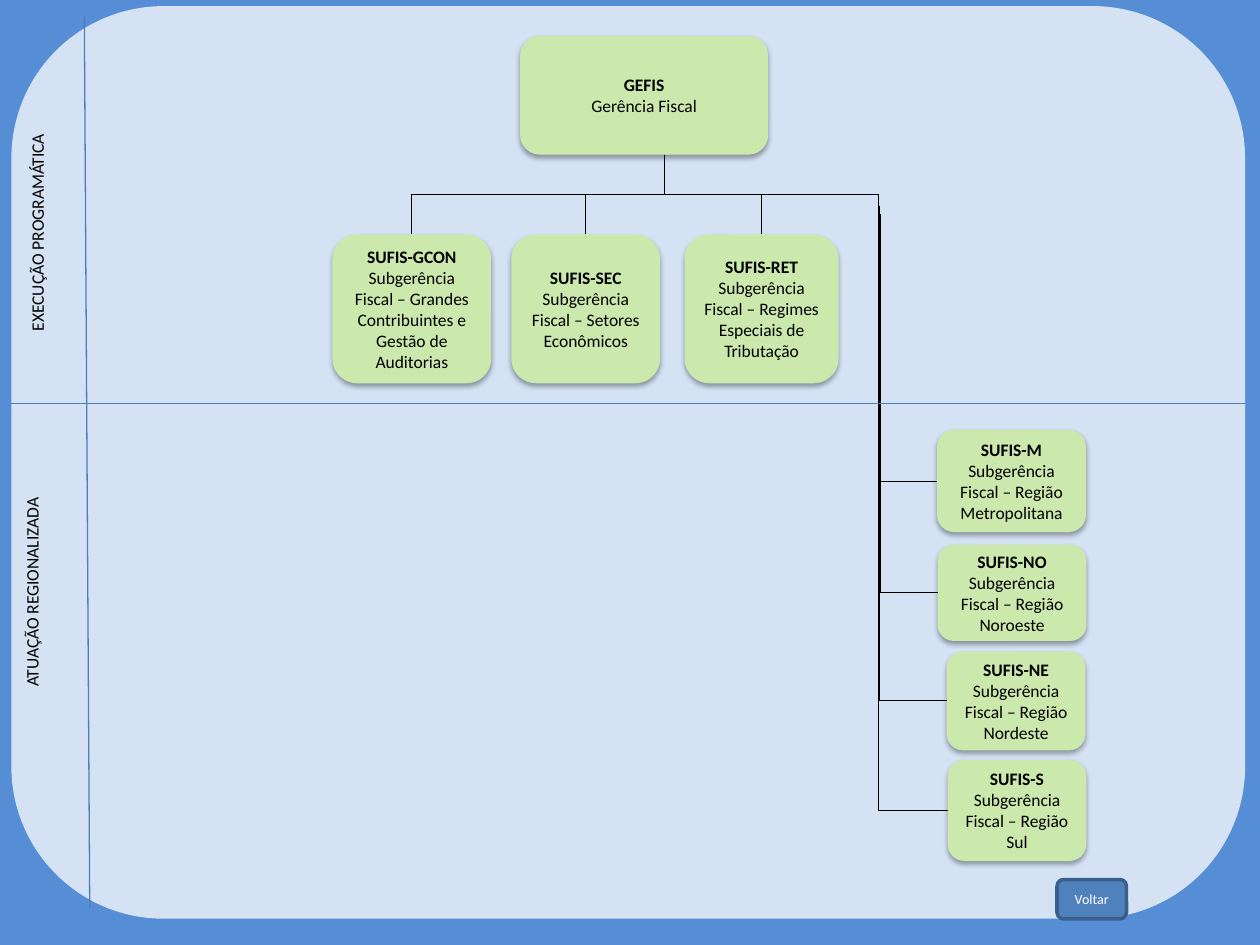
from lxml import etree
from pptx import Presentation
from pptx.dml.color import RGBColor
from pptx.enum.shapes import MSO_CONNECTOR, MSO_SHAPE
from pptx.enum.text import MSO_ANCHOR, MSO_AUTO_SIZE, PP_ALIGN
from pptx.oxml import parse_xml
from pptx.oxml.ns import qn
from pptx.util import Pt

ROUNDED = MSO_SHAPE.ROUNDED_RECTANGLE
STRAIGHT, ELBOW = MSO_CONNECTOR.STRAIGHT, MSO_CONNECTOR.ELBOW
MIDDLE, CENTER = MSO_ANCHOR.MIDDLE, PP_ALIGN.CENTER
FIT_SHAPE = MSO_AUTO_SIZE.SHAPE_TO_FIT_TEXT
NAMESPACE = "http://schemas.openxmlformats.org/drawingml/2006/main"

THEME = {
    "background": RGBColor.from_string("558ED5"),
    "panel": RGBColor.from_string("D4E2F4"),
    "unit": RGBColor.from_string("CCE9AD"),
    "button": RGBColor.from_string("4F81BD"),
    "button_border": RGBColor.from_string("3A5F8C"),
    "divider": RGBColor.from_string("4B7EBC"),
    "black": RGBColor.from_string("000000"),
    "white": RGBColor.from_string("FFFFFF"),
    "font": "Calibri",
    "body": Pt(10),
    "small": Pt(8),
}
SHADOW = (
    f'<a:effectLst xmlns:a="{NAMESPACE}">'
    f'<a:outerShdw blurRad="{Pt(3.1)}" dist="{Pt(1.8)}" dir="5400000" rotWithShape="0">'
    '<a:srgbClr val="000000"><a:alpha val="35000"/></a:srgbClr>'
    "</a:outerShdw></a:effectLst>"
)


def write(shape, lines, color, size, frame_format):
    frame = shape.text_frame
    for name, value in frame_format.items():
        setattr(frame, name, value)
    for index, (text, bold) in enumerate(lines):
        paragraph = frame.add_paragraph() if index else frame.paragraphs[0]
        paragraph.alignment = CENTER
        run = paragraph.add_run()
        run.text = text
        for name, value in {"name": THEME["font"], "size": size, "bold": bold}.items():
            setattr(run.font, name, value)
        run.font.color.rgb = color


def connect(kind, begin_x, begin_y, end_x, end_y, color):
    connector = slide.shapes.add_connector(
        kind, Pt(begin_x), Pt(begin_y), Pt(end_x), Pt(end_y)
    )
    connector.line.width = Pt(0.75)
    connector.line.color.rgb = color
    etree.SubElement(connector.element.spPr, qn("a:effectLst"))
    return connector


presentation = Presentation()
presentation.slide_width, presentation.slide_height = Pt(720), Pt(540)
slide = presentation.slides.add_slide(presentation.slide_layouts[6])
slide.background.fill.solid()
slide.background.fill.fore_color.rgb = THEME["background"]

panel = slide.shapes.add_shape(ROUNDED, Pt(6.5), Pt(3.5), Pt(705), Pt(521.5))
panel.shadow.inherit = False
panel.fill.solid()
panel.fill.fore_color.rgb = THEME["panel"]
panel.line.fill.background()

units = [
    ("GEFIS", "Gerência Fiscal", 297.2, 20.6, 141.8, 67.8),
    ("SUFIS-GCON", "Subgerência Fiscal – Grandes Contribuintes e Gestão de Auditorias",
     190, 134, 90.7, 85),
    ("SUFIS-SEC", "Subgerência Fiscal – Setores Econômicos", 292.2, 134, 85, 85),
    ("SUFIS-RET", "Subgerência Fiscal – Regimes Especiais de Tributação",
     391.2, 134, 88, 85),
    ("SUFIS-M", "Subgerência Fiscal – Região Metropolitana", 535.5, 245.7, 85, 58.3),
    ("SUFIS-NO", "Subgerência Fiscal – Região Noroeste", 535.8, 311.3, 85, 55),
    ("SUFIS-NE", "Subgerência Fiscal – Região Nordeste", 541, 372.3, 79.3, 56.5),
    ("SUFIS-S", "Subgerência Fiscal – Região Sul", 541.5, 434.2, 79.3, 57.8),
]
for code, description, left, top, width, height in units:
    unit = slide.shapes.add_shape(ROUNDED, Pt(left), Pt(top), Pt(width), Pt(height))
    unit.fill.solid()
    unit.fill.fore_color.rgb = THEME["unit"]
    unit.line.fill.background()
    unit.element.spPr.append(parse_xml(SHADOW))
    write(unit, [(code, True), (description, False)], THEME["black"], THEME["body"],
          {"word_wrap": True, "vertical_anchor": MIDDLE})

trunk_x, trunk_y, bus_y = 379.7, 88.5, 111.3
branches = [
    ("bentConnector3", trunk_x, trunk_y, 235.3, 134),
    ("bentConnector3", trunk_x, trunk_y, 334.7, 134),
    ("bentConnector3", trunk_x, trunk_y, 435.2, 134),
    ("bentConnector2", 502.8, 121, 535.5, 275),
    ("bentConnector2", 502.8, 122.4, 535.8, 338.8),
    ("bentConnector2", 502.8, 118, 541, 400.4),
    ("bentConnector2", 502, 111, 541.5, 463),
]
for preset, begin_x, begin_y, end_x, end_y in branches:
    center_x, center_y = (begin_x + end_x) / 2, (begin_y + end_y) / 2
    half_width, half_height = abs(end_x - begin_x) / 2, (end_y - begin_y) / 2
    branch = connect(ELBOW, center_x - half_height, center_y - half_width,
                     center_x + half_height, center_y + half_width, THEME["black"])
    branch.element.spPr.find(qn("a:prstGeom")).set("prst", preset)
    transform = branch.element.spPr.find(qn("a:xfrm"))
    if end_x > begin_x:
        transform.set("rot", "16200000")
        transform.set("flipH", "1")
    else:
        transform.set("rot", "5400000")

for begin_x, begin_y, end_x, end_y, color in [
    (368.6, bus_y, 502, bus_y, THEME["black"]),
    (6.5, 230.4, 711.5, 230.4, THEME["divider"]),
    (48.2, 9.4, 51.3, 519, THEME["divider"]),
]:
    connect(STRAIGHT, begin_x, begin_y, end_x, end_y, color)

for label, left, top, width, height in [
    ("EXECUÇÃO PROGRAMÁTICA", 11.5, 68.4, 26.6, 128.9),
    ("ATUAÇÃO REGIONALIZADA", 8.6, 185.8, 26.6, 305.3),
]:
    text_box = slide.shapes.add_textbox(Pt(left), Pt(top), Pt(width), Pt(height))
    write(text_box, [(label, False)], THEME["black"], THEME["body"],
          {"word_wrap": True, "auto_size": FIT_SHAPE})
    text_box.element.txBody.find(qn("a:bodyPr")).set("vert", "vert270")

button = slide.shapes.add_shape(ROUNDED, Pt(604), Pt(502.6), Pt(39.7), Pt(22.5))
button.shadow.inherit = False
button.fill.solid()
button.fill.fore_color.rgb = THEME["button"]
button.line.color.rgb = THEME["button_border"]
button.line.width = Pt(2)
write(button, [("Voltar", False)], THEME["white"], THEME["small"],
      {"word_wrap": True, "vertical_anchor": MIDDLE})

presentation.save("out.pptx")
